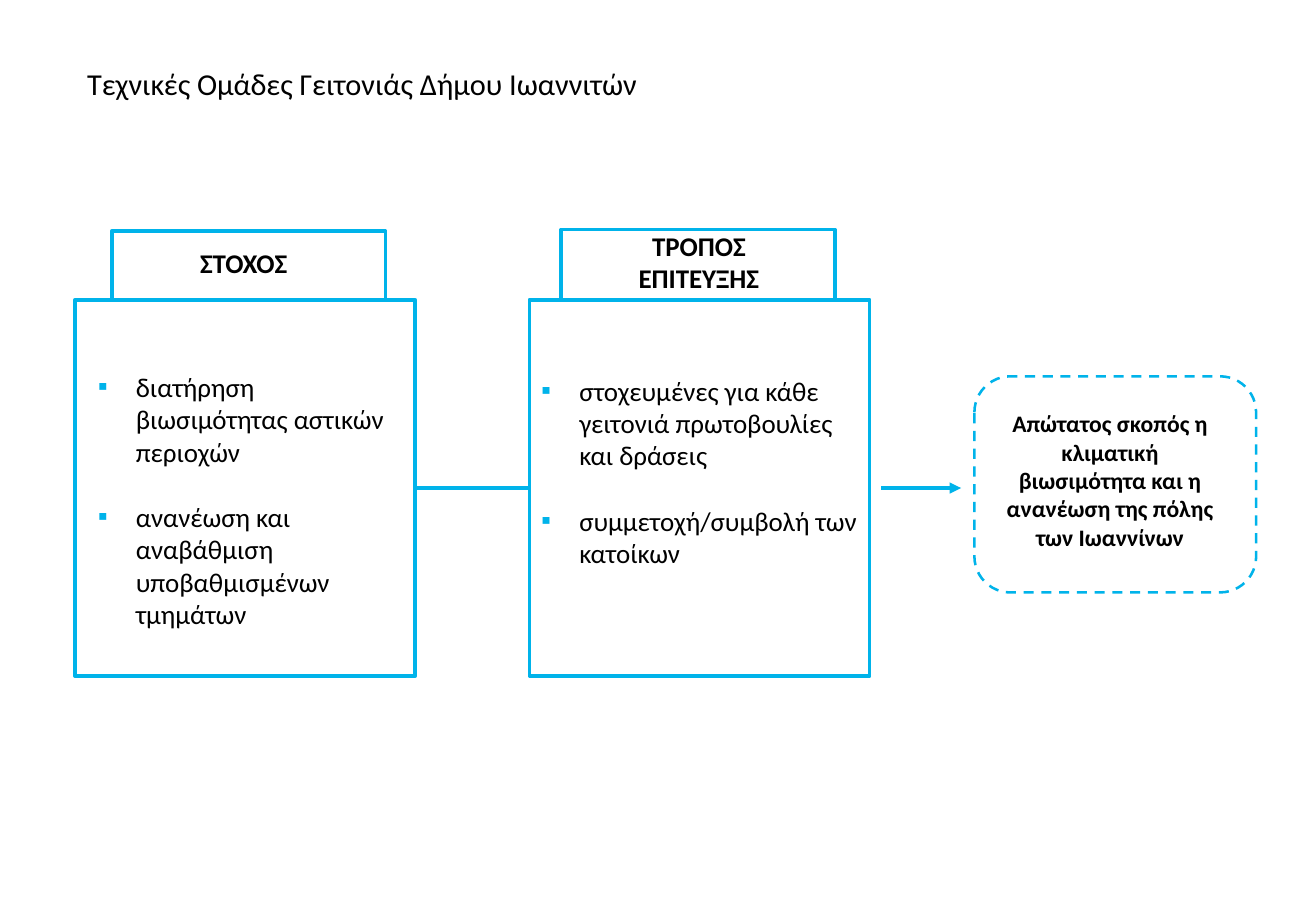
from dataclasses import dataclass

from lxml.etree import SubElement
from pptx import Presentation
from pptx.dml.color import RGBColor
from pptx.enum.dml import MSO_LINE_DASH_STYLE as Dash
from pptx.enum.shapes import MSO_CONNECTOR as Link, MSO_SHAPE as Preset
from pptx.enum.text import MSO_AUTO_SIZE as AutoSize, PP_ALIGN as Align
from pptx.oxml.ns import qn
from pptx.shapes.autoshape import Shape
from pptx.shapes.connector import Connector
from pptx.slide import Slide
from pptx.util import Cm, Pt

COLORS = {"accent": "00B3EA", "text": "000000"}
FONT = "Calibri"
CARD_TOP, CARD_WIDTH, CARD_HEIGHT = 6.27, 7.11, 7.87
AXIS_Y = CARD_TOP + CARD_HEIGHT / 2


@dataclass(frozen=True)
class Area:
    left: float
    top: float
    width: float
    height: float

    def lengths(self) -> tuple[Cm, Cm, Cm, Cm]:
        return Cm(self.left), Cm(self.top), Cm(self.width), Cm(self.height)


@dataclass(frozen=True)
class Card:
    left: float
    tab: Area
    heading: str
    heading_area: Area
    points: tuple[str, ...]
    points_area: Area


CARDS = (
    Card(
        1.57,
        Area(2.34, 4.83, 5.72, 1.44),
        "ΣΤΟΧΟΣ",
        Area(3.28, 5.03, 3.63, 0.94),
        (
            "διατήρηση βιωσιμότητας αστικών περιοχών",
            "ανανέωση και αναβάθμιση υποβαθμισμένων τμημάτων",
        ),
        Area(1.8, 7.62, 6.78, 5.74),
    ),
    Card(
        11.07,
        Area(11.73, 4.8, 5.72, 1.47),
        "ΤΡΟΠΟΣ ΕΠΙΤΕΥΞΗΣ",
        Area(12.5, 4.67, 4.22, 1.63),
        (
            "στοχευμένες για κάθε γειτονιά πρωτοβουλίες και δράσεις",
            "συμμετοχή/συμβολή των κατοίκων",
        ),
        Area(11.07, 7.7, 7.11, 4.37),
    ),
)


def color(name: str) -> RGBColor:
    return RGBColor.from_string(COLORS[name])


def add_frame(slide: Slide, preset: Preset, area: Area, weight: float = 2.25) -> Shape:
    frame = slide.shapes.add_shape(preset, *area.lengths())
    frame.shadow.inherit = False
    frame.fill.background()
    frame.line.color.rgb = color("accent")
    frame.line.width = Pt(weight)
    return frame


def add_bullet(paragraph) -> None:
    properties = paragraph._p.get_or_add_pPr()
    properties.set("marL", str(Cm(0.79)))
    properties.set("indent", str(-Cm(0.79)))
    bullet_color = SubElement(properties, qn("a:buClr"))
    SubElement(bullet_color, qn("a:srgbClr"), val=COLORS["accent"])
    SubElement(properties, qn("a:buFont"), typeface=FONT)
    SubElement(properties, qn("a:buChar"), char="▪")


def add_text(
    slide: Slide,
    area: Area,
    lines: tuple[str, ...],
    size: int,
    bold: bool = False,
    align: Align = Align.LEFT,
    bulleted: bool = False,
) -> None:
    frame = slide.shapes.add_textbox(*area.lengths()).text_frame
    frame.word_wrap = True
    frame.auto_size = AutoSize.SHAPE_TO_FIT_TEXT
    for index, line in enumerate(lines):
        paragraph = frame.add_paragraph() if index else frame.paragraphs[0]
        if bulleted:
            add_bullet(paragraph)
        paragraph.alignment = align
        if index:
            paragraph.space_before = Pt(19.5)
        run = paragraph.add_run()
        run.text = line
        run.font.name = FONT
        run.font.size = Pt(size)
        run.font.bold = bold
        run.font.color.rgb = color("text")


def add_link(slide: Slide, start: float, end: float) -> Connector:
    link = slide.shapes.add_connector(
        Link.STRAIGHT, Cm(start), Cm(AXIS_Y), Cm(end), Cm(AXIS_Y)
    )
    link.line.color.rgb = color("accent")
    link.line.width = Pt(2.25)
    SubElement(link._element.spPr, qn("a:effectLst"))
    return link


def main() -> None:
    deck = Presentation()
    deck.slide_width, deck.slide_height = Cm(27.51), Cm(19.05)
    slide = deck.slides.add_slide(deck.slide_layouts[6])

    add_text(
        slide,
        Area(1.57, 1.24, 19, 1.02),
        ("Τεχνικές Ομάδες Γειτονιάς Δήμου Ιωαννιτών",),
        18,
    )

    bodies = []
    for card in CARDS:
        body = Area(card.left, CARD_TOP, CARD_WIDTH, CARD_HEIGHT)
        bodies.append(add_frame(slide, Preset.RECTANGLE, body))
        add_frame(slide, Preset.RECTANGLE, card.tab)
        add_text(slide, card.heading_area, (card.heading,), 16, True, Align.CENTER)
        add_text(slide, card.points_area, card.points, 16, bulleted=True)

    goal = add_frame(slide, Preset.ROUNDED_RECTANGLE, Area(20.37, 7.87, 5.89, 4.52), 1.5)
    goal.line.dash_style = Dash.DASH
    add_text(
        slide,
        Area(20.68, 8.43, 5.05, 3.25),
        ("Απώτατος σκοπός η κλιματική βιωσιμότητα και η ανανέωση της πόλης των Ιωαννίνων",),
        14,
        True,
        Align.CENTER,
    )

    aim, means = CARDS
    bridge = add_link(slide, aim.left + CARD_WIDTH, means.left)
    bridge.begin_connect(bodies[0], 3)
    bridge.end_connect(bodies[1], 1)

    arrow = add_link(slide, 18.42, 20.09)
    SubElement(arrow.line._get_or_add_ln(), qn("a:tailEnd"), type="triangle")

    deck.save("out.pptx")


if __name__ == "__main__":
    main()
